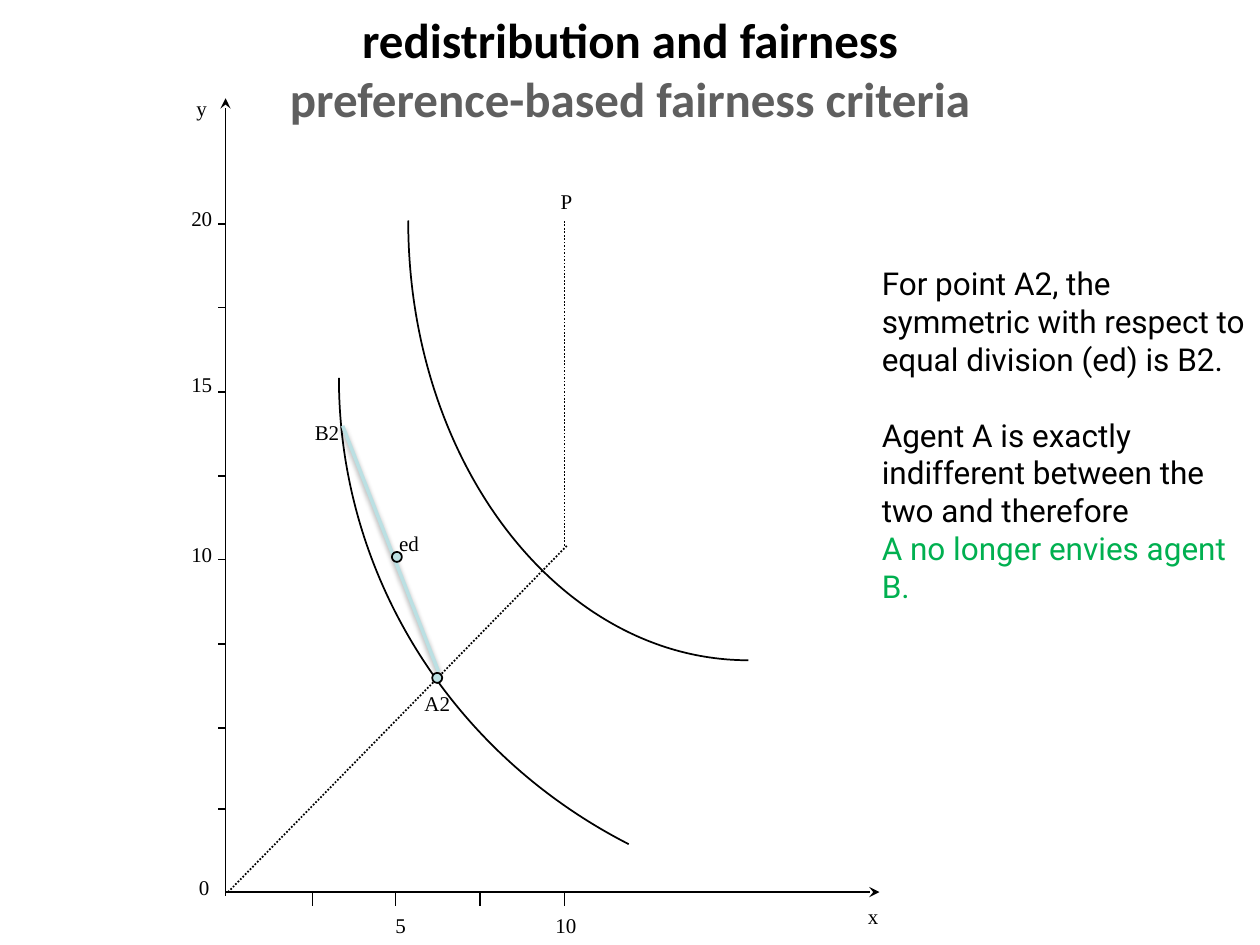
from lxml import etree
from pptx import Presentation
from pptx.dml.color import RGBColor
from pptx.enum.dml import MSO_LINE
from pptx.enum.shapes import MSO_CONNECTOR, MSO_SHAPE
from pptx.enum.text import MSO_ANCHOR, MSO_AUTO_SIZE, PP_ALIGN
from pptx.oxml import parse_xml
from pptx.oxml.ns import nsdecls, qn
from pptx.util import Inches, Pt

BLACK = RGBColor(0x00, 0x00, 0x00)
GRAY = RGBColor(0x5F, 0x5F, 0x5F)
GREEN = RGBColor(0x00, 0xB0, 0x50)
PALE_BLUE = RGBColor(0xBB, 0xE0, 0xE3)

# Content
TITLE = [("redistribution and fairness", BLACK),
         ("preference-based fairness criteria", GRAY)]
EXPLANATION = [  # text, colour, space before in points
    ("For point A2, the symmetric with respect to equal division (ed) is B2.", BLACK, 0),
    ("Agent A is exactly indifferent between the two and therefore", BLACK, 21.6),
    ("A no longer envies agent B.", GREEN, 0),
]

# Diagram geometry in inches
AXIS_X, AXIS_Y = 1.79, 7.08
TICK_XS = [2.48, 3.14, 3.81, 4.48]
TICK_YS = [1.78, 2.44, 3.11, 3.78, 4.44, 5.11, 5.78, 6.42]
AXES = [((AXIS_X, AXIS_Y), (6.98, AXIS_Y)), ((AXIS_X, 7.11), (AXIS_X, 0.78))]
DOTTED_LINES = [((1.81, AXIS_Y), (4.5, 4.33)), ((4.48, 4.33), (4.48, 1.75))]
SYMMETRY_LINE = ((3.48, 5.33), (2.72, 3.38))
INDIFFERENCE_CURVES = [  # start, two control points, end
    [(3.24, 1.75), (3.24, 3.68), (4.45, 5.24), (5.94, 5.24)],
    [(2.69, 3.0), (2.69, 4.56), (3.58, 5.98), (4.99, 6.7)],
]
LABELS = [  # text, left, top, width
    ("20", 1.42, 1.58, 0.37), ("15", 1.42, 2.9, 0.37), ("10", 1.42, 4.25, 0.37),
    ("0", 1.48, 6.89, 0.28), ("5", 3.04, 7.19, 0.44), ("10", 4.31, 7.19, 0.44),
    ("y", 1.46, 0.71, 0.28), ("x", 6.79, 7.12, 0.28), ("P", 4.35, 1.45, 0.29),
    ("ed", 3.07, 4.16, 0.36), ("B2", 2.4, 3.28, 0.4), ("A2", 3.27, 5.43, 0.41),
]
LABEL_HEIGHT = 0.3
DOTS = [(3.43, 5.34), (3.11, 4.38)]
DOT_SIZE = 0.08

SHADOW = (f'<a:effectLst {nsdecls("a")}><a:outerShdw blurRad="39370" dist="20320" '
          'dir="5400000" rotWithShape="0"><a:srgbClr val="000000">'
          '<a:alpha val="38000"/></a:srgbClr></a:outerShdw></a:effectLst>')
NO_EFFECT = f'<a:effectLst {nsdecls("a")}/>'


def add_line(slide, start, end, color=BLACK, width=1, dash=None, arrow=False,
             effect=NO_EFFECT):
    line = slide.shapes.add_connector(
        MSO_CONNECTOR.STRAIGHT, *(Inches(value) for value in (*start, *end)))
    line.line.color.rgb = color
    line.line.width = Pt(width)
    if dash:
        line.line.dash_style = dash
    if arrow:
        etree.SubElement(line.line._get_or_add_ln(), qn("a:tailEnd"), type="stealth")
    line._element.spPr.append(parse_xml(effect))


def add_curve(slide, points):
    # The builder rounds to whole units, so it is given EMU
    start, *others = [(Inches(x), Inches(y)) for x, y in points]
    builder = slide.shapes.build_freeform(*start)
    builder.add_line_segments(others, close=False)
    curve = builder.convert_to_shape()
    curve.shadow.inherit = False
    curve.fill.background()
    curve.line.color.rgb = BLACK
    curve.line.width = Pt(1)
    # Turn the three straight segments into one Bézier segment
    segments = list(curve._element.iter(qn("a:lnTo")))
    outline = segments[0].getparent()
    bezier = etree.SubElement(outline, qn("a:cubicBezTo"))
    for segment in segments:
        bezier.append(segment[0])
        outline.remove(segment)


def add_text_frame(slide, left, top, width, height, wrap=True):
    box = slide.shapes.add_textbox(*map(Inches, (left, top, width, height)))
    box.text_frame.word_wrap = wrap
    return box.text_frame


def set_font(paragraph, name, size, color=None):
    paragraph.font.name = name
    paragraph.font.size = Pt(size)
    if color is not None:
        paragraph.font.color.rgb = color


def add_diagram(slide):
    # Axes and ticks
    for start, end in AXES:
        add_line(slide, start, end, arrow=True)
    for x in TICK_XS:
        add_line(slide, (x, 7.19), (x, AXIS_Y))
    for y in TICK_YS:
        add_line(slide, (AXIS_X, y), (1.73, y))
    # Path to P, indifference curves and the symmetric pair
    for start, end in DOTTED_LINES:
        add_line(slide, start, end, dash=MSO_LINE.ROUND_DOT)
    for points in INDIFFERENCE_CURVES:
        add_curve(slide, points)
    add_line(slide, *SYMMETRY_LINE, color=PALE_BLUE, width=2, effect=SHADOW)
    # Labels
    for text, left, top, width in LABELS:
        frame = add_text_frame(slide, left, top, width, LABEL_HEIGHT,
                               wrap=width == 0.44)
        frame.auto_size = MSO_AUTO_SIZE.SHAPE_TO_FIT_TEXT
        frame.text = text
        set_font(frame.paragraphs[0], "Times New Roman", 12, BLACK)
    # Points
    for left, top in DOTS:
        dot = slide.shapes.add_shape(
            MSO_SHAPE.FLOWCHART_CONNECTOR,
            *map(Inches, (left, top, DOT_SIZE, DOT_SIZE)))
        dot.shadow.inherit = False
        dot.fill.solid()
        dot.fill.fore_color.rgb = PALE_BLUE
        dot.line.color.rgb = BLACK
        dot.line.width = Pt(1)


def add_title(slide):
    frame = add_text_frame(slide, 0.5, -0.08, 9, 1.25)
    frame.vertical_anchor = MSO_ANCHOR.MIDDLE
    paragraph = frame.paragraphs[0]
    paragraph.alignment = PP_ALIGN.CENTER
    set_font(paragraph, "Calibri", 28)
    paragraph.font.bold = True
    for index, (text, color) in enumerate(TITLE):
        if index:
            paragraph.add_line_break()
        run = paragraph.add_run()
        run.text = text
        run.font.color.rgb = color


def add_explanation(slide):
    frame = add_text_frame(slide, 6.9, 2.05, 3.1, 2.83)
    frame.auto_size = MSO_AUTO_SIZE.SHAPE_TO_FIT_TEXT
    frame.text = "\n".join(text for text, _, _ in EXPLANATION)
    for paragraph, (_, color, space) in zip(frame.paragraphs, EXPLANATION):
        set_font(paragraph, "Roboto", 18, color)
        paragraph.space_before = Pt(space)


def main():
    presentation = Presentation()
    presentation.slide_width = Inches(10)
    presentation.slide_height = Inches(7.5)
    slide = presentation.slides.add_slide(presentation.slide_layouts[6])
    add_diagram(slide)
    add_title(slide)
    add_explanation(slide)
    presentation.save("out.pptx")


if __name__ == "__main__":
    main()
